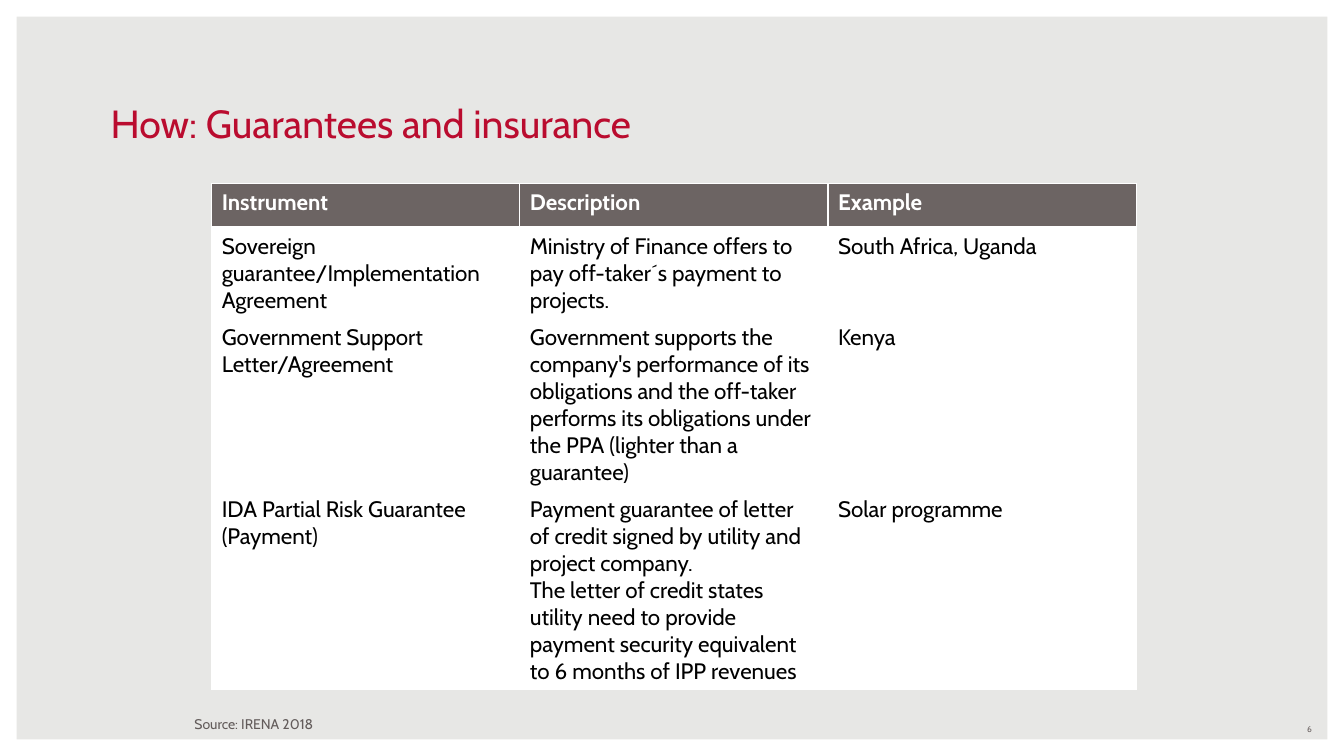
from lxml.etree import SubElement
from pptx import Presentation
from pptx.dml.color import RGBColor
from pptx.enum.shapes import MSO_SHAPE
from pptx.enum.text import MSO_ANCHOR, PP_ALIGN
from pptx.oxml.ns import qn
from pptx.util import Inches, Pt

C = {"bg": "E7E7E5", "white": "FFFFFF", "header": "6C6463", "source": "635C5B",
     "title": "BA0C2F", "body": "000000"}
FONT = "Cabin"
BORDERS = {"a:lnL": 1, "a:lnR": 1, "a:lnT": 1, "a:lnB": 3}
ROW_HEIGHTS = [0.44, 0.9, 1.71, 1.97]
ROWS = [
    [["Instrument"], ["Description"], ["Example"]],
    [["Sovereign guarantee/Implementation Agreement"],
     ["Ministry of Finance offers to pay off-taker´s payment to projects."],
     ["South Africa, Uganda"]],
    [["Government Support Letter/Agreement"],
     ["Government supports the company's performance of its obligations and the "
      "off-taker performs its obligations under the PPA (lighter than a guarantee)"],
     ["Kenya"]],
    [["IDA Partial Risk Guarantee", "(Payment)"],
     ["Payment guarantee of letter of credit signed by utility and project company.",
      "The letter of credit states utility need to provide payment security "
      "equivalent to 6 months of IPP revenues"],
     ["Solar programme"]],
]


def rgb(name):
    return RGBColor.from_string(C[name])


def write(tf, lines, size, color, bold=False, align=PP_ALIGN.LEFT):
    tf.word_wrap = True
    for i, line in enumerate(lines):
        p = tf.paragraphs[0] if i == 0 else tf.add_paragraph()
        p.alignment = align
        r = p.add_run()
        r.text = line
        r.font.name = FONT
        r.font.size = Pt(size)
        r.font.bold = bold
        r.font.color.rgb = rgb(color)


def add_text(s, box, text, size, color, anchor=MSO_ANCHOR.TOP, align=PP_ALIGN.LEFT):
    tf = s.shapes.add_textbox(*map(Inches, box)).text_frame
    tf.vertical_anchor = anchor
    write(tf, [text], size, color, align=align)


def add_frame(s, width, height):
    s.background.fill.solid()
    s.background.fill.fore_color.rgb = rgb("bg")
    sp = s.shapes.add_shape(MSO_SHAPE.FRAME, 0, 0, width, height)
    sp.adjustments[0] = 0.022
    sp.shadow.inherit = False
    sp.fill.solid()
    sp.fill.fore_color.rgb = rgb("white")
    sp.line.fill.background()


def add_borders(cell):
    tcPr = cell._tc.get_or_add_tcPr()
    for tag, width in BORDERS.items():
        ln = SubElement(tcPr, qn(tag), w=str(Pt(width)))
        fill = SubElement(ln, qn("a:solidFill"))
        SubElement(fill, qn("a:srgbClr"), val=C["white"])


def add_instruments(s, x, y, width):
    n = len(ROWS[0])
    table = s.shapes.add_table(len(ROWS), n, Inches(x), Inches(y), Inches(width),
                               Inches(sum(ROW_HEIGHTS))).table
    for col in table.columns:
        col.width = Inches(width / n)
    for i, (row, height) in enumerate(zip(ROWS, ROW_HEIGHTS)):
        header = i == 0
        table.rows[i].height = Inches(height)
        for j, lines in enumerate(row):
            cell = table.cell(i, j)
            if header:
                add_borders(cell)
            cell.fill.solid()
            cell.fill.fore_color.rgb = rgb("header" if header else "white")
            write(cell.text_frame, lines, 16, "white" if header else "body", header)


def main():
    prs = Presentation()
    prs.slide_width, prs.slide_height = Inches(13.33), Inches(7.5)
    s = prs.slides.add_slide(prs.slide_layouts[6])
    add_frame(s, prs.slide_width, prs.slide_height)
    add_text(s, (10, 7.13, 3.11, 0.2), "6", 6, "header", MSO_ANCHOR.MIDDLE, PP_ALIGN.RIGHT)
    add_text(s, (1.83, 7.05, 3.75, 0.27), "Source: IRENA 2018", 10, "source")
    add_instruments(s, 2.1, 1.82, 9.17)
    add_text(s, (1, 0.93, 11.33, 0.57), "How: Guarantees and insurance", 28, "title",
             MSO_ANCHOR.BOTTOM)
    prs.save("out.pptx")


if __name__ == "__main__":
    main()
